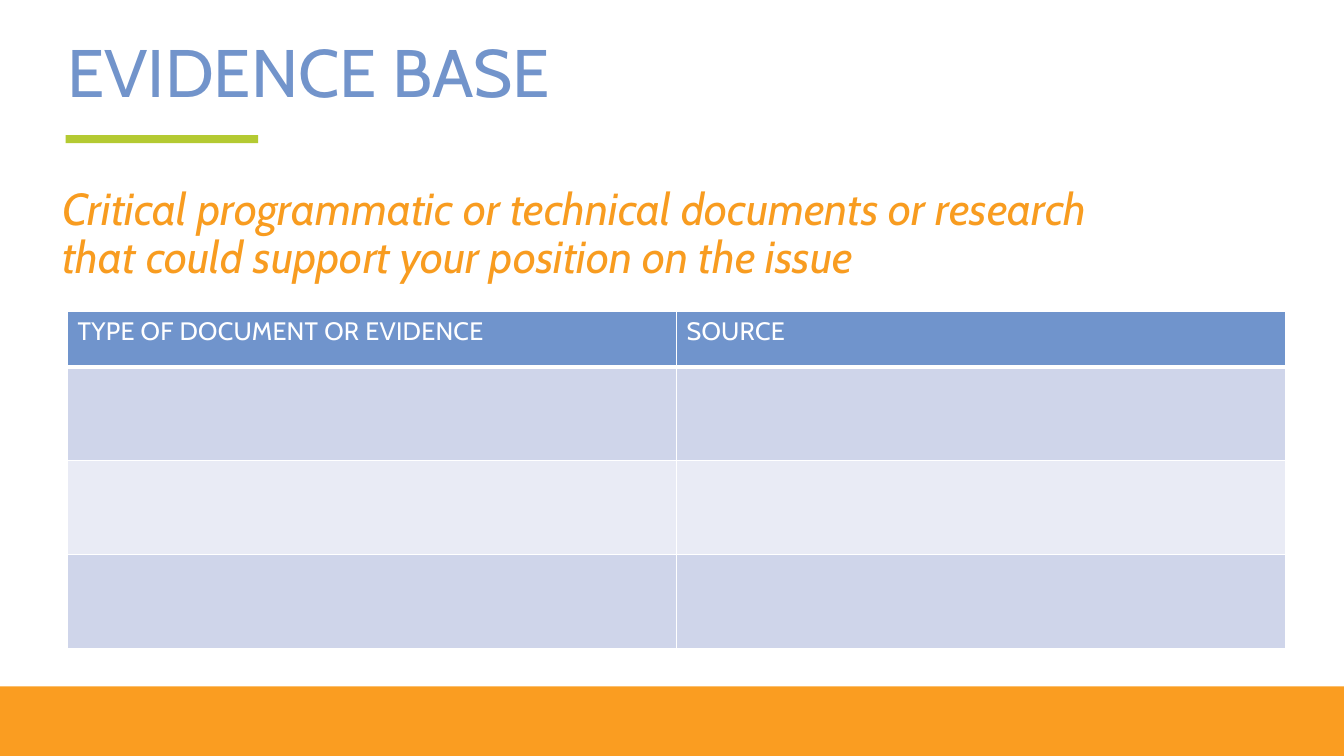
import pptx
import pptx.dml.color
import pptx.enum.shapes
import pptx.oxml
import pptx.oxml.ns
import pptx.util

Inches = pptx.util.Inches
Pt = pptx.util.Pt


class SlideBuilder:
    font = "Cabin"
    colors = {
        "title": "7294CB",
        "accent": "B4CA32",
        "subtitle": "F89C20",
        "footer": "FA9D21",
        "header": "7094CC",
        "band_dark": "CFD5EA",
        "band_light": "E9EBF5",
        "white": "FFFFFF",
    }

    def __init__(self, prs):
        self.s = prs.slides.add_slide(prs.slide_layouts[6])

    def color(self, name):
        return pptx.dml.color.RGBColor.from_string(self.colors[name])

    def run(self, p, text, size, color, italic=False):
        r = p.add_run()
        r.text = text
        r.font.name = self.font
        r.font.size = Pt(size)
        r.font.bold = False
        r.font.italic = italic
        r.font.color.rgb = self.color(color)
        return r

    def text(self, box, lines, size, color, italic=False, wrap=True, spacing=None):
        sp = self.s.shapes.add_textbox(*map(Inches, box))
        tf = sp.text_frame
        tf.word_wrap = wrap
        p = tf.paragraphs[0]
        if spacing:
            p.line_spacing = Pt(spacing)
        for i, line in enumerate(lines):
            if i:
                p.add_line_break()
            self.run(p, line, size, color, italic)

    def bar(self, box, color):
        sp = self.s.shapes.add_shape(
            pptx.enum.shapes.MSO_SHAPE.RECTANGLE, *map(Inches, box))
        sp.shadow.inherit = False
        sp.fill.solid()
        sp.fill.fore_color.rgb = self.color(color)
        sp.line.fill.background()

    def borders(self, cell, widths):
        tc_pr = cell._tc.get_or_add_tcPr()
        for i, (side, width) in enumerate(widths.items()):
            ln = pptx.oxml.parse_xml(
                f'<a:ln{side} {pptx.oxml.ns.nsdecls("a")} w="{Pt(width)}">'
                f'<a:solidFill><a:srgbClr val="{self.colors["white"]}"/></a:solidFill>'
                f'</a:ln{side}>')
            tc_pr.insert(i, ln)

    def table(self, box, headers, row_heights, fills):
        sp = self.s.shapes.add_table(
            len(row_heights), len(headers), *map(Inches, box))
        table = sp.table
        table.horz_banding = False
        for column in table.columns:
            column.width = Inches(box[2] / len(headers))
        for i, (height, fill) in enumerate(zip(row_heights, fills)):
            table.rows[i].height = Inches(height)
            for j, header in enumerate(headers):
                cell = table.cell(i, j)
                cell.fill.solid()
                cell.fill.fore_color.rgb = self.color(fill)
                self.borders(cell, {"L": 1, "R": 1, "T": 3 if i == 1 else 1,
                                    "B": 3 if i == 0 else 1})
                if i == 0:
                    p = cell.text_frame.paragraphs[0]
                    r = self.run(p, header, 18, "white")
                    r.font._element.set("spc", "20")


def main():
    prs = pptx.Presentation()
    prs.slide_width = Inches(13.33)
    prs.slide_height = Inches(7.5)
    slide = SlideBuilder(prs)
    slide.text((0.57, 0.25, 5.16, 0.91), ["EVIDENCE BASE"], 48, "title", wrap=False)
    slide.text(
        (0.52, 1.8, 12.69, 1.05),
        ["Critical programmatic or technical documents or research",
         "that could support your position on the issue"],
        32, "subtitle", italic=True, spacing=34.4)
    slide.table(
        (0.67, 3.09, 12.08, 3.33),
        ["TYPE OF DOCUMENT OR EVIDENCE", "SOURCE"],
        [0.55] + [0.93] * 3,
        ["header", "band_dark", "band_light", "band_dark"])
    slide.bar((0, 6.81, 13.33, 0.69), "footer")
    slide.bar((0.65, 1.34, 1.91, 0.08), "accent")
    prs.save("out.pptx")


if __name__ == "__main__":
    main()
